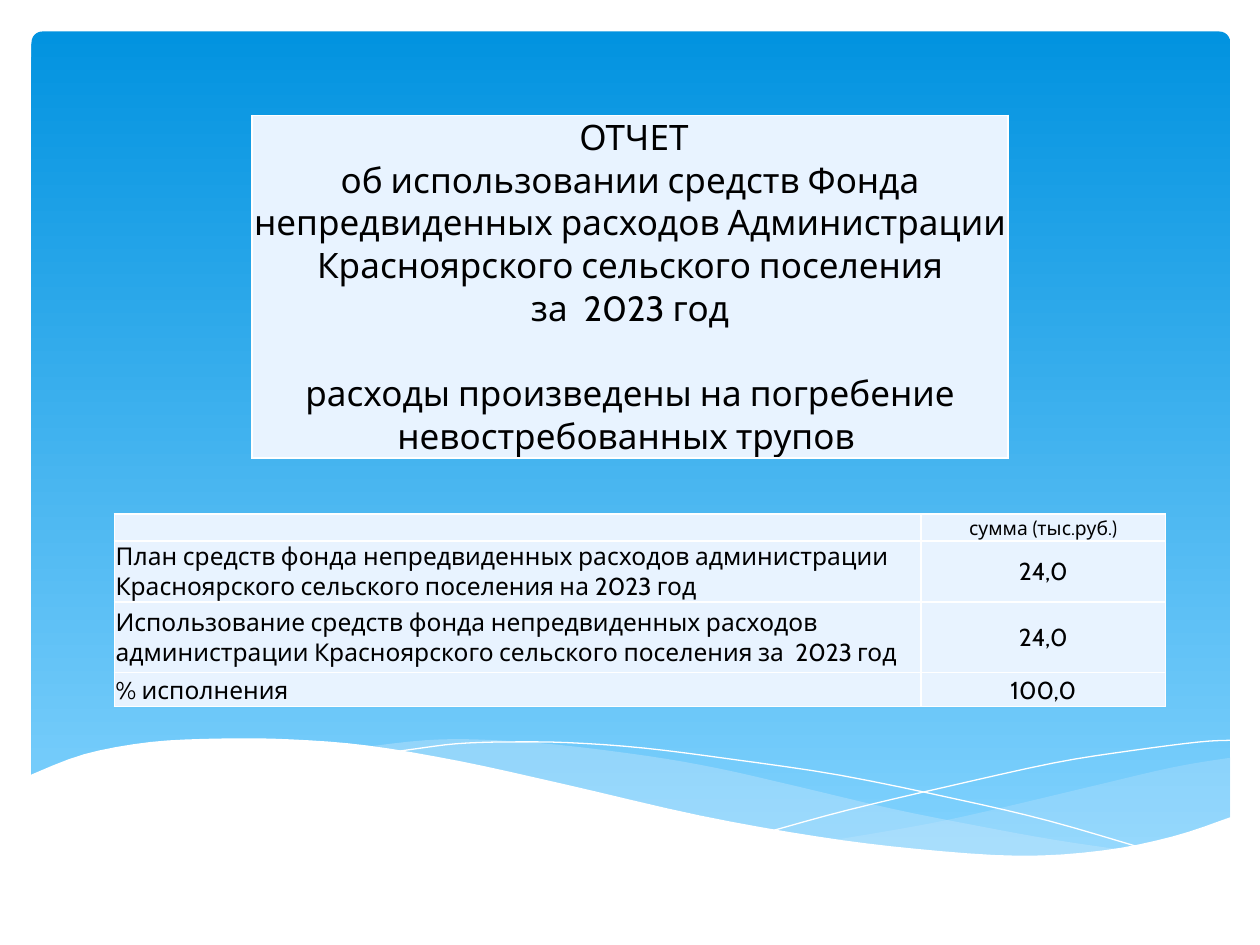
from pptx import Presentation
from pptx.dml.color import RGBColor
from pptx.enum.shapes import MSO_SHAPE as SHAPE
from pptx.enum.text import MSO_ANCHOR as ANCHOR, PP_ALIGN as ALIGN
from pptx.oxml.xmlchemy import OxmlElement
from pptx.util import Pt

WHITE = RGBColor(0xFF, 0xFF, 0xFF)
BLACK = RGBColor(0, 0, 0)
SKY_TOP = RGBColor(0x02, 0x93, 0xE0)
SKY_BOTTOM = RGBColor(0x83, 0xD3, 0xFE)
MIST = RGBColor(0xC6, 0xE7, 0xFC)
CELL = RGBColor(0xE8, 0xF3, 0xFF)

RIGHT_WAVE = [
    [(703, 433), (670, 438.5), (621, 450), (562, 464), (526, 471.6), (477, 480)],
    [(477, 480), (518, 485), (563, 489), (602, 489), (641, 485), (674, 477), (703, 467)],
]
MIDDLE_WAVE = [
    [(207, 427), (243, 423), (274, 422.6), (318, 425.5), (370, 432), (410, 439),
     (454, 449), (509, 462), (559, 472), (603, 480), (644, 486)],
    [(644, 486), (612, 489), (574, 489.5), (530, 487), (480, 481), (433, 473),
     (382, 462), (324, 449), (276, 438), (233, 430.5), (207, 427)],
]
FALLING_LINE = [(223, 430), (237, 428), (261, 425), (289, 424), (325, 424.4), (368, 427.5),
                (419, 434), (480, 443), (548, 457), (599, 469), (654, 485)]
RISING_LINE = [(442, 474.5), (484, 463), (539, 450), (602, 436), (646, 429),
               (685, 424), (703, 423)]
FRONT_WAVE = [
    [(703, 467), (670, 478), (630, 486), (582, 489), (523, 485), (467, 478), (400, 466),
     (322, 448), (263, 435), (210, 426), (166, 422.5), (127, 422), (86, 424), (48, 431),
     (17, 443)],
    [(17, 526), (703, 526)],
]

TITLE = [
    [" ОТЧЕТ",
     "об использовании средств Фонда непредвиденных расходов Администрации "
     "Красноярского сельского поселения",
     "за  2023 год"],
    ["расходы произведены на погребение невостребованных трупов "],
]
ROWS = [
    (15.3, "", "сумма (тыс.руб.)"),
    (34.8, "План средств фонда непредвиденных расходов администрации "
           "Красноярского сельского поселения на 2023 год", "24,0"),
    (40.4, "Использование средств фонда непредвиденных расходов администрации "
           "Красноярского сельского поселения за  2023 год", "24,0"),
    (19.5, "% исполнения", "100,0"),
]


def smooth(knots, steps=4):
    """Return points of a Catmull-Rom curve through the knots."""
    if len(knots) < 3:
        return knots
    ends = [knots[0], *knots, knots[-1]]
    points = [knots[0]]
    for a, b, c, d in zip(ends, ends[1:], ends[2:], ends[3:]):
        for i in range(1, steps + 1):
            t = i / steps
            points.append(tuple(
                (2 * q + (r - p) * t + (2 * p - 5 * q + 4 * r - s) * t ** 2
                 + (3 * q - p - 3 * r + s) * t ** 3) / 2
                for p, q, r, s in zip(a, b, c, d)))
    return points


class Slide:
    font = "Cabin"
    margin = Pt(0.72)

    def __init__(self, prs):
        self.s = prs.slides.add_slide(prs.slide_layouts[6])

    def sky(self, x, y, w, h):
        sp = self.s.shapes.add_shape(SHAPE.ROUNDED_RECTANGLE, Pt(x), Pt(y), Pt(w), Pt(h))
        sp.adjustments[0] = 0.013
        sp.shadow.inherit = False
        sp.line.fill.background()
        sp.fill.gradient()
        sp.fill.gradient_angle = 270
        for stop, color in zip(sp.fill.gradient_stops, (SKY_TOP, SKY_BOTTOM)):
            stop.color.rgb = color

    def outline(self, points, close):
        (x, y), *rest = [(Pt(x), Pt(y)) for x, y in points]
        builder = self.s.shapes.build_freeform(x, y)
        builder.add_line_segments(rest, close=close)
        sp = builder.convert_to_shape()
        sp.shadow.inherit = False
        return sp

    def wave(self, edges, color, opacity=100):
        sp = self.outline([pt for edge in edges for pt in smooth(edge)], True)
        sp.line.fill.background()
        sp.fill.solid()
        sp.fill.fore_color.rgb = color
        if opacity < 100:
            alpha = OxmlElement("a:alpha")
            alpha.set("val", str(opacity * 1000))
            sp.fill._xPr.solidFill[0].append(alpha)

    def curve(self, knots):
        sp = self.outline(smooth(knots), False)
        sp.fill.background()
        sp.line.color.rgb = WHITE
        sp.line.width = Pt(0)

    def table(self, x, y, widths, heights):
        tbl = self.s.shapes.add_table(len(heights), len(widths), Pt(x), Pt(y),
                                      Pt(sum(widths)), Pt(sum(heights))).table
        tbl.first_row = tbl.horz_banding = False
        for col, w in zip(tbl.columns, widths):
            col.width = Pt(w)
        for row, h in zip(tbl.rows, heights):
            row.height = Pt(h)
        return tbl

    def cell(self, cell, paragraphs, size, align, anchor=ANCHOR.MIDDLE):
        """Fill a cell with paragraphs, each given as a list of lines."""
        cell.margin_left = cell.margin_right = cell.margin_top = self.margin
        cell.margin_bottom = 0
        cell.vertical_anchor = anchor
        self.borders(cell)
        cell.fill.solid()
        cell.fill.fore_color.rgb = CELL
        tf = cell.text_frame
        for i, lines in enumerate(paragraphs):
            p = tf.add_paragraph() if i else tf.paragraphs[0]
            p.alignment = align
            if i:
                p.space_before = Pt(24.4)
            for j, line in enumerate(lines):
                if j:
                    p.add_line_break()
                r = p.add_run()
                r.text = line
                r.font.name = self.font
                r.font.size = Pt(size)
                r.font.color.rgb = BLACK
        if not paragraphs:
            end = OxmlElement("a:endParaRPr")
            end.set("sz", str(size * 100))
            tf.paragraphs[0]._p.append(end)

    def borders(self, cell):
        tc_pr = cell._tc.get_or_add_tcPr()
        for side in "LRTB":
            ln = OxmlElement(f"a:ln{side}")
            ln.set("w", str(Pt(1)))
            fill, color = OxmlElement("a:solidFill"), OxmlElement("a:srgbClr")
            color.set("val", str(WHITE))
            fill.append(color)
            ln.append(fill)
            tc_pr.append(ln)


def main():
    prs = Presentation()
    prs.slide_width, prs.slide_height = Pt(720), Pt(540)
    slide = Slide(prs)

    slide.sky(18, 18, 685, 475)
    slide.wave(RIGHT_WAVE, MIST, 29)
    slide.wave(MIDDLE_WAVE, MIST, 40)
    slide.curve(FALLING_LINE)
    slide.curve(RISING_LINE)
    slide.wave(FRONT_WAVE, WHITE)

    title = slide.table(144, 66, [432], [193])
    slide.cell(title.cell(0, 0), TITLE, 20, ALIGN.CENTER)

    report = slide.table(65.3, 293.8, [461, 139.7], [row[0] for row in ROWS])
    for i, (_, label, value) in enumerate(ROWS):
        size = 14 if i else 11
        anchor = ANCHOR.TOP if i == 1 else ANCHOR.MIDDLE
        slide.cell(report.cell(i, 0), [[label]] if label else [], size, ALIGN.LEFT, anchor)
        slide.cell(report.cell(i, 1), [[value]], size, ALIGN.CENTER)

    prs.save("out.pptx")


if __name__ == "__main__":
    main()
